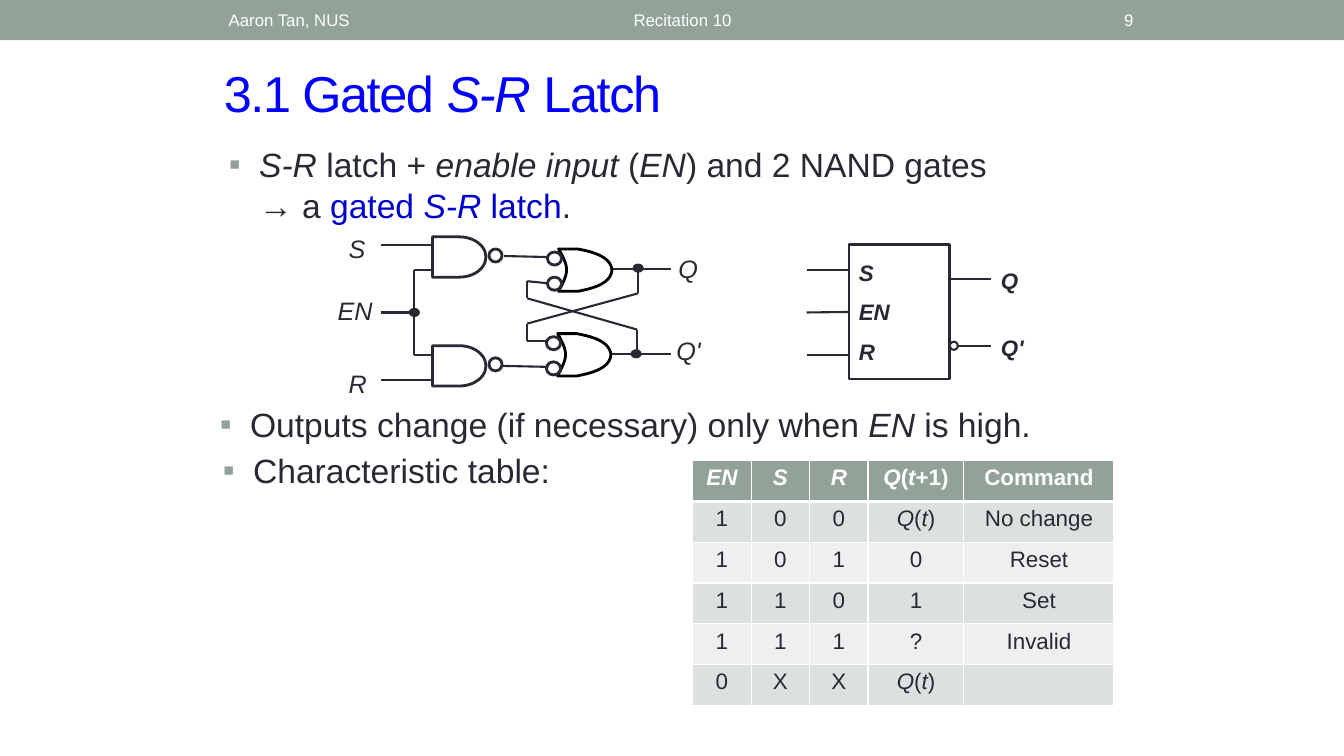
import lxml.etree
import pptx
import pptx.dml.color
import pptx.enum.shapes
import pptx.enum.text
import pptx.util

Inches = pptx.util.Inches
Pt = pptx.util.Pt
SHAPE = pptx.enum.shapes.MSO_SHAPE
ALIGN = pptx.enum.text.PP_ALIGN
ANCHOR = pptx.enum.text.MSO_ANCHOR

COLORS = {"sage": "93A299", "ink": "292934", "title": "0000FF", "term": "0000CC", "black": "000000",
          "white": "FFFFFF", "dark band": "DCE0DE", "light band": "EEF0EF"}
LEFT, RIGHT, CENTER = ALIGN.LEFT, ALIGN.RIGHT, ALIGN.CENTER


def color(name):
    return pptx.dml.color.RGBColor.from_string(COLORS[name])


def add_xml(parent, tag, **attributes):
    namespace = "http://schemas.openxmlformats.org/drawingml/2006/main"
    return lxml.etree.SubElement(parent, f"{{{namespace}}}{tag}", attributes)


def write_text(paragraph, text, size=18, ink="ink", bold=False, align=LEFT, before=0, spacing=None):
    """Write text in which asterisks switch italics on and off."""
    paragraph.alignment = align
    paragraph.space_before = Pt(before)
    for index, part in enumerate(text.split("*")):
        if part:
            run = paragraph.add_run()
            run.text = part
            run.font.name = "Arial"
            run.font.size = Pt(size)
            run.font.bold = bold
            run.font.italic = index % 2 == 1
            run.font.color.rgb = color(ink)
            if spacing:
                run.font._element.set("spc", str(spacing))


def curve(start, first, second, end, steps=12):
    points = []
    for step in range(1, steps + 1):
        t = step / steps
        weights = ((1 - t) ** 3, 3 * t * (1 - t) ** 2, 3 * t * t * (1 - t), t ** 3)
        points.append(tuple(sum(weight * point[axis] for weight, point in zip(weights, (start, first, second, end)))
                            for axis in (0, 1)))
    return points


class SlideBuilder:
    def __init__(self, presentation):
        self.slide = presentation.slides.add_slide(presentation.slide_layouts[4])
        self.shapes = self.slide.shapes

    def start_group(self):
        self.shapes = self.slide.shapes.add_group_shape().shapes

    def end_group(self):
        self.shapes = self.slide.shapes

    def shape(self, kind, left, top, width, height, fill=None, line="ink", weight=2):
        shape = self.shapes.add_shape(kind, Inches(left), Inches(top), Inches(width), Inches(height))
        return self.paint(shape, fill, line, weight)

    def paint(self, shape, fill, line, weight):
        shape.shadow.inherit = False
        if fill:
            shape.fill.solid()
            shape.fill.fore_color.rgb = color(fill)
        else:
            shape.fill.background()
        if line:
            shape.line.color.rgb = color(line)
            shape.line.width = Pt(weight)
        else:
            shape.line.fill.background()
        return shape

    def outline(self, points, line="black", weight=2):
        corners = [(Inches(x), Inches(y)) for x, y in points]
        builder = self.shapes.build_freeform(*corners[0])
        builder.add_line_segments(corners[1:], close=True)
        return self.paint(builder.convert_to_shape(), None, line, weight)

    def wire(self, *ends):
        connector = self.shapes.add_connector(
            pptx.enum.shapes.MSO_CONNECTOR.STRAIGHT, *(Inches(value) for value in ends))
        connector.line.color.rgb = color("ink")
        connector.line.width = Pt(1.5)
        add_xml(connector._element.spPr, "effectLst")
        return connector

    def label(self, texts, left, top, width, height, anchor=ANCHOR.TOP, before=0, **style):
        box = self.shapes.add_textbox(Inches(left), Inches(top), Inches(width), Inches(height))
        frame = box.text_frame
        frame.word_wrap = True
        frame.vertical_anchor = anchor
        for index, text in enumerate(texts):
            paragraph = frame.add_paragraph() if index else frame.paragraphs[0]
            write_text(paragraph, text, before=before if index else 0, **style)

    def placeholder(self, index, left, top, width, height, anchor=ANCHOR.TOP):
        shape = self.slide.placeholders[index]
        shape.left, shape.top = Inches(left), Inches(top)
        shape.width, shape.height = Inches(width), Inches(height)
        frame = shape.text_frame
        frame.auto_size = pptx.enum.text.MSO_AUTO_SIZE.NONE
        frame.word_wrap = True
        frame.vertical_anchor = anchor
        return frame.paragraphs[0]

    def bullet(self, index, parts, *box):
        paragraph = self.placeholder(index, *box)
        for text, ink in parts:
            write_text(paragraph, text, size=24, ink=ink)
        properties = paragraph._p.get_or_add_pPr()
        properties.set("marL", str(Inches(0.3)))
        properties.set("indent", str(Inches(-0.3)))
        add_xml(add_xml(properties, "buClr"), "srgbClr", val=COLORS["sage"])
        add_xml(properties, "buFont", typeface="Arial")
        add_xml(properties, "buChar", char="▪")

    def nand_gate(self, top):
        self.shape(SHAPE.FLOWCHART_DELAY, 4.29, top, 0.53, 0.4)
        self.shape(SHAPE.OVAL, 4.85, top + 0.12, 0.13, 0.13)

    def or_gate(self, left, top):
        def place(*points):
            return [(left + x, top + y) for x, y in points]
        upper = curve(*place((0.19, 0), (0.29, 0.02), (0.52, 0.06), (0.53, 0.21)))
        lower = curve(*place((0.53, 0.21), (0.52, 0.36), (0.29, 0.4), (0.19, 0.42)))
        back = curve(*place((0, 0.42), (0.02, 0.38), (0.08, 0.28), (0.08, 0.21)))
        back += curve(*place((0.08, 0.21), (0.08, 0.14), (0.04, 0.07), (0, 0)))
        self.outline(place((0, 0), (0.19, 0)) + upper + lower + place((0, 0.42)) + back)
        for offset in (0.03, 0.28):
            self.shape(SHAPE.OVAL, left - 0.11, top + offset, 0.14, 0.13)

    def table(self, rows, widths, left, top, height):
        frame = self.shapes.add_table(len(rows), len(widths), Inches(left), Inches(top),
                                      Inches(sum(widths)), Inches(height))
        table = frame.table
        for column, width in zip(table.columns, widths):
            column.width = Inches(width)
        for row_index, row in enumerate(rows):
            header = row_index == 0
            fill = "sage" if header else ("light band", "dark band")[row_index % 2]
            weights = {"lnL": 1, "lnR": 1, "lnT": 3 if row_index == 1 else 1, "lnB": 3 if header else 1}
            for column_index, text in enumerate(row):
                cell = table.cell(row_index, column_index)
                for side, weight in weights.items():
                    border = add_xml(cell._tc.get_or_add_tcPr(), side, w=str(Pt(weight)))
                    add_xml(add_xml(border, "solidFill"), "srgbClr", val=COLORS["white"])
                cell.fill.solid()
                cell.fill.fore_color.rgb = color(fill)
                write_text(cell.text_frame.paragraphs[0], text, size=16, bold=header,
                           ink="white" if header else "ink", align=CENTER)


def draw_circuit(builder):
    builder.start_group()
    wires = [
        (3.78, 2.43, 4.3, 2.43), (3.78, 3.77, 4.3, 3.77), (3.78, 3.1, 4.13, 3.1),
        (4.11, 2.68, 4.3, 2.68), (4.11, 3.52, 4.3, 3.52), (4.11, 2.68, 4.11, 3.52),
        (5, 2.54, 5.43, 2.55), (4.99, 3.63, 5.44, 3.64),
        (5.23, 2.79, 5.43, 2.81), (5.23, 3.38, 5.43, 3.38),
        (5.23, 2.79, 5.23, 2.96), (5.23, 3.21, 5.23, 3.38),
        (6.07, 2.67, 6.66, 2.67), (6.07, 3.51, 6.66, 3.51),
        (6.33, 2.67, 6.33, 2.91), (6.32, 3.27, 6.32, 3.52),
        (5.23, 2.96, 6.32, 3.27), (6.33, 2.91, 5.23, 3.21)]
    for ends in wires:
        builder.wire(*ends)
    for left, top in ((4.06, 3.06), (6.28, 2.62), (6.26, 3.47)):
        builder.shape(SHAPE.OVAL, left, top, 0.1, 0.08, fill="ink", weight=0.75)
    for top in (2.35, 3.43):
        builder.nand_gate(top)
    for left, top in ((5.54, 2.47), (5.53, 3.31)):
        builder.or_gate(left, top)
    for text, left, top in (("*S*", 3.36, 2.27), ("*EN*", 3.25, 2.88), ("*R*", 3.36, 3.6),
                            ("*Q*", 6.63, 2.46), ("*Q'*", 6.61, 3.28)):
        builder.label([text], left, top, 0.6, 0.4)
    builder.end_group()


def draw_symbol(builder):
    builder.start_group()
    block = builder.shape(SHAPE.RECTANGLE, 8.42, 2.43, 1, 1.33)
    for y in (2.68, 3.52):
        builder.wire(8, y, 8.42, y)
    builder.wire(8, 3.1, 8.42, 3.1).end_connect(block, 1)
    builder.wire(9.42, 2.77, 9.83, 2.77)
    builder.wire(9.5, 3.43, 9.83, 3.43)
    builder.shape(SHAPE.OVAL, 9.42, 3.39, 0.08, 0.08, weight=1.5)
    builder.label(["*S*", "*EN*", "*R*"], 8.42, 2.52, 0.58, 1.17, size=16, bold=True, before=9)
    builder.label(["*Q*", "*Q'*"], 9.83, 2.6, 0.5, 1.06, size=16, bold=True, before=29)
    builder.end_group()


def main():
    presentation = pptx.Presentation()
    presentation.slide_width, presentation.slide_height = Inches(13.33), Inches(7.5)
    builder = SlideBuilder(presentation)

    builder.shape(SHAPE.RECTANGLE, 0, 0, 13.33, 0.4, fill="sage", line=None)
    for text, left, width, align in (("Aaron Tan, NUS", 2.17, 3.17, LEFT),
                                     ("Recitation 10", 4.52, 4.5, CENTER), ("9", 10.39, 0.95, RIGHT)):
        builder.label([text], left, 0.02, width, 0.36, anchor=ANCHOR.MIDDLE, size=12, ink="white", align=align)

    title = builder.placeholder(0, 2.12, 0.57, 9.42, 0.7, ANCHOR.MIDDLE)
    write_text(title, "3.1 Gated *S-R* Latch", size=36, ink="title", spacing=-100)
    builder.bullet(1, [("*S-R* latch + *enable input* (*EN*) and 2 NAND gates → a ", "ink"),
                       ("gated *S-R* latch", "term"), (".", "ink")], 2.17, 1.38, 8.03, 1.04)
    builder.bullet(2, [("Outputs change (if necessary) only when *EN* is high.", "ink")], 2.08, 3.96, 9, 0.64)
    builder.bullet(3, [("Characteristic table:", "ink")], 2.11, 4.41, 3.65, 0.7)
    spare = builder.slide.placeholders[4]._element
    spare.getparent().remove(spare)

    draw_circuit(builder)
    draw_symbol(builder)
    rows = [["*EN*", "*S*", "*R*", "*Q*(*t*+1)", "Command"],
            ["1", "0", "0", "*Q*(*t*)", "No change"],
            ["1", "0", "1", "0", "Reset"],
            ["1", "1", "0", "1", "Set"],
            ["1", "1", "1", "?", "Invalid"],
            ["0", "X", "X", "*Q*(*t*)", ""]]
    builder.table(rows, [0.58, 0.58, 0.58, 0.95, 1.49], 6.87, 4.57, 2.43)
    presentation.save("out.pptx")


if __name__ == "__main__":
    main()
